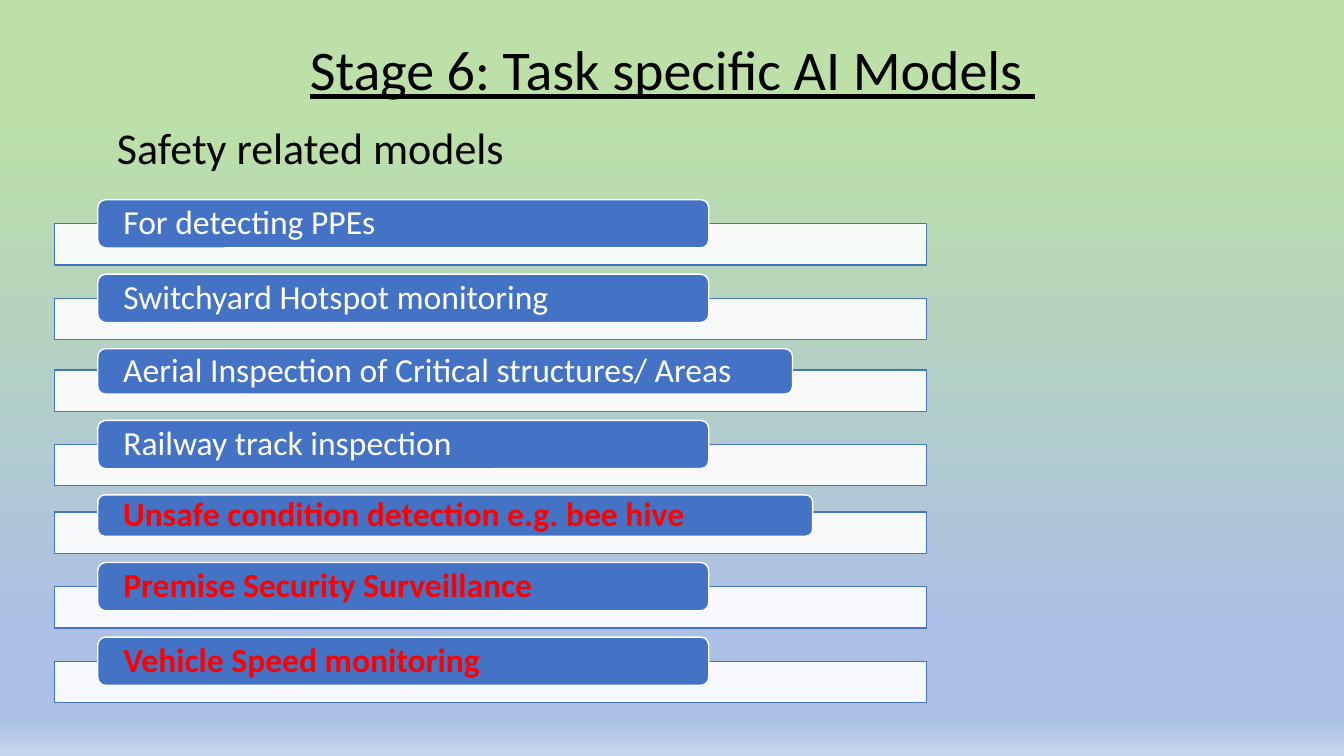
from lxml.etree import SubElement
from pptx import Presentation
from pptx.dml.color import RGBColor
from pptx.enum.shapes import MSO_SHAPE
from pptx.enum.text import MSO_ANCHOR, MSO_AUTO_SIZE, PP_ALIGN
from pptx.oxml.ns import qn
from pptx.util import Inches, Pt

# Content
TITLE = "Stage 6: Task specific AI Models "
SUBTITLE = "Safety related models"
BLACK, WHITE, BLUE, RED = "000000", "FFFFFF", "4472C4", "FF0000"
BACKGROUND = [(15, "BCE0A7"), (83, "ABC0E4"), (95, "ABC0E4"), (100, "C7D5ED")]
MODELS = [  # text, label width, label height, highlighted
    ("For detecting PPEs", 6.06, 0.48, False),
    ("Switchyard Hotspot monitoring", 6.06, 0.48, False),
    ("Aerial Inspection of Critical structures/ Areas", 6.89, 0.45, False),
    ("Railway track inspection", 6.06, 0.48, False),
    ("Unsafe condition detection e.g. bee hive", 7.09, 0.41, True),
    ("Premise Security Surveillance", 6.06, 0.48, True),
    ("Vehicle Speed monitoring", 6.06, 0.48, True),
]

# Layout of the list
LIST_TOP, GAP = 1.98, 0.09
BAR_LEFT, BAR_WIDTH, BAR_HEIGHT = 0.54, 8.65, 0.41
LABEL_LEFT, OVERLAP = 0.97, 0.24


def rgb(value):
    return RGBColor.from_string(value)


def write(tf, text, size, color, spacing, bold=False, underline=False):
    p = tf.paragraphs[0]
    p.line_spacing = spacing
    p.space_before = Pt(0)
    r = p.add_run()
    r.text = text
    r.font.name = "Calibri"
    r.font.size = Pt(size)
    r.font.bold = bold
    r.font.underline = underline
    r.font.color.rgb = rgb(color)
    return p


def add_box(s, shape, box, fill, line):
    sp = s.shapes.add_shape(shape, *map(Inches, box))
    sp.shadow.inherit = False
    sp.fill.solid()
    sp.fill.fore_color.rgb = rgb(fill)
    sp.line.color.rgb = rgb(line)
    sp.line.width = Pt(1)
    return sp


def place(sp, box, anchor):
    sp.left, sp.top, sp.width, sp.height = map(Inches, box)
    tf = sp.text_frame
    tf.auto_size = MSO_AUTO_SIZE.NONE
    tf.vertical_anchor = anchor
    return tf


prs = Presentation()
prs.slide_width, prs.slide_height = Inches(13.33), Inches(7.5)
s = prs.slides.add_slide(prs.slide_layouts[1])

# Background gradient, top to bottom
fill = s.background.fill
fill.gradient()
fill.gradient_angle = 270
stops = next(s.element.iter(qn("a:gsLst")))
for stop in list(stops):
    stops.remove(stop)
for position, color in BACKGROUND:
    stop = SubElement(stops, qn("a:gs"), pos=str(position * 1000))
    SubElement(stop, qn("a:srgbClr"), val=color)

# Title and subtitle
tf = place(s.shapes.title, (0.92, 0.19, 11.5, 1.06), MSO_ANCHOR.MIDDLE)
p = write(tf, TITLE, 40, BLACK, 0.9, underline=True)
p.alignment = PP_ALIGN.CENTER

tf = place(s.placeholders[1], (1.06, 1.25, 9.49, 0.51), MSO_ANCHOR.TOP)
pPr = tf.paragraphs[0]._p.get_or_add_pPr()
pPr.set("marL", "0")
pPr.set("indent", "0")
SubElement(pPr, qn("a:buNone"))
write(tf, SUBTITLE, 31.4, BLACK, 0.8)

# Models: a label overlapping the bar below it
top = LIST_TOP
for text, width, height, highlighted in MODELS:
    bar_top = top + height - OVERLAP
    bar = add_box(s, MSO_SHAPE.RECTANGLE,
                  (BAR_LEFT, bar_top, BAR_WIDTH, BAR_HEIGHT), WHITE, BLUE)
    bar_color = next(bar.element.spPr.iter(qn("a:srgbClr")))
    SubElement(bar_color, qn("a:alpha"), val="90000")

    label = add_box(s, MSO_SHAPE.ROUNDED_RECTANGLE,
                    (LABEL_LEFT, top, width, height), BLUE, WHITE)
    tf = label.text_frame
    tf.word_wrap = True
    tf.vertical_anchor = MSO_ANCHOR.MIDDLE
    tf.margin_left = tf.margin_right = Inches(0.23)
    tf.margin_top = tf.margin_bottom = 0
    p = write(tf, text, 24, RED if highlighted else WHITE, 0.9, bold=highlighted)
    p.alignment = PP_ALIGN.LEFT
    top = bar_top + BAR_HEIGHT + GAP

prs.save("out.pptx")
